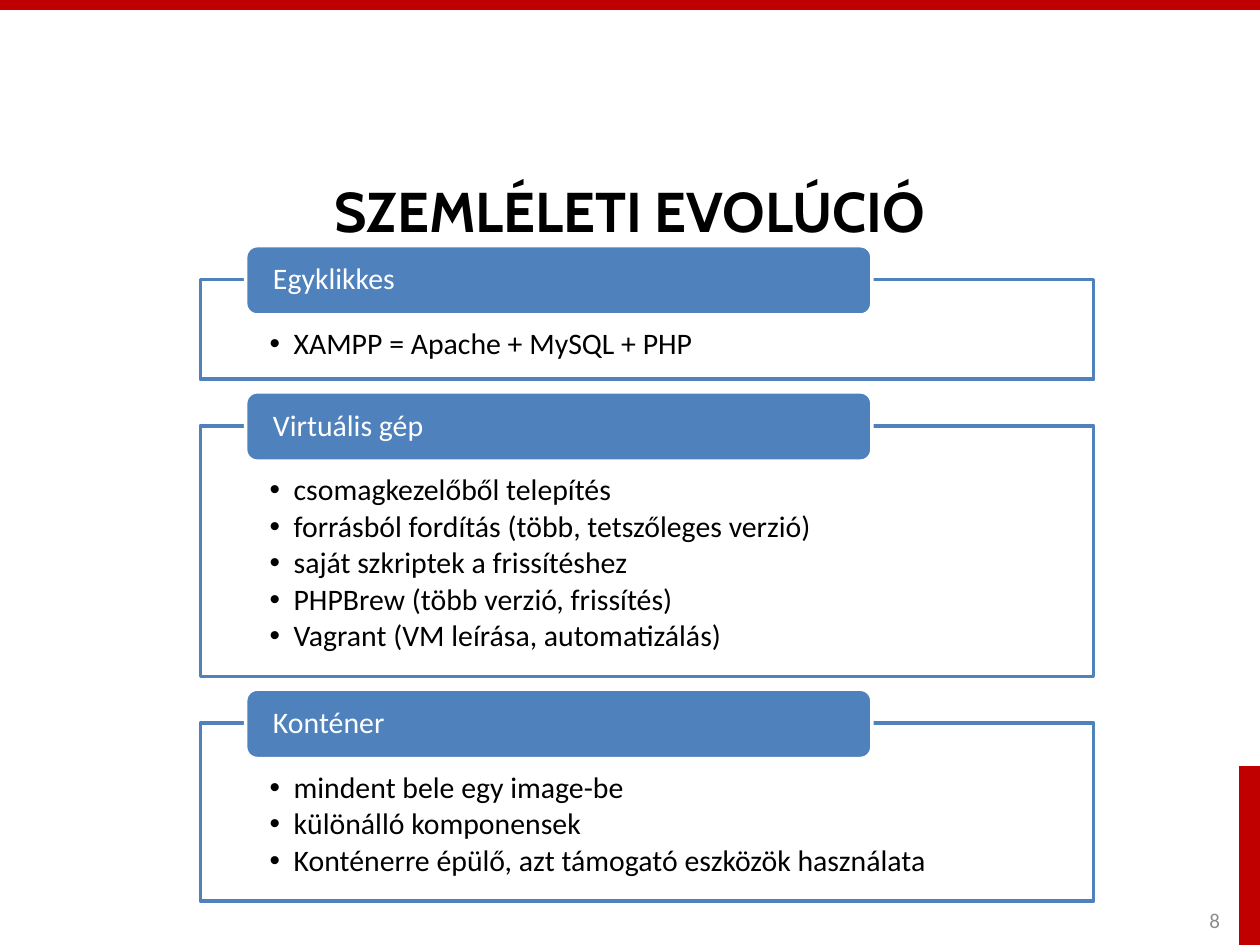
from lxml.etree import SubElement
from pptx import Presentation
from pptx.dml.color import RGBColor
from pptx.enum.shapes import MSO_CONNECTOR, MSO_SHAPE
from pptx.enum.text import MSO_ANCHOR, PP_ALIGN
from pptx.oxml.ns import qn
from pptx.util import Inches, Pt

HUES = {"red": "C00000", "blue": "4F81BD", "white": "FFFFFF", "black": "000000", "gray": "8C8C8C"}


def style(para, size, hue, face="Calibri", bold=False):
    font = para.font
    font.name, font.size, font.bold = face, Pt(size), bold
    font.color.rgb = RGBColor.from_string(HUES[hue])


def add_box(kind, left, top, width, height, fill, line, pads, anchor):
    box = slide.shapes.add_shape(kind, Inches(left), Inches(top), Inches(width), Inches(height))
    box.shadow.inherit = False
    box.fill.solid()
    box.fill.fore_color.rgb = RGBColor.from_string(HUES[fill])
    box.line.color.rgb = RGBColor.from_string(HUES[line])
    box.line.width = Pt(2)
    frame = box.text_frame
    frame.word_wrap = True
    frame.vertical_anchor = anchor
    frame.margin_left = frame.margin_right = Inches(pads[0])
    frame.margin_top, frame.margin_bottom = Inches(pads[1]), Inches(pads[2])
    return frame


deck = Presentation()
deck.slide_width, deck.slide_height = Inches(10), Inches(7.5)
slide = deck.slides.add_slide(deck.slide_layouts[5])

bars = [(0, 0.04, 10, 0.04, 6), (9.92, 6.08, 9.92, 7.5, 12)]
for x1, y1, x2, y2, width in bars:
    bar = slide.shapes.add_connector(
        MSO_CONNECTOR.STRAIGHT, Inches(x1), Inches(y1), Inches(x2), Inches(y2))
    bar.line.color.rgb = RGBColor.from_string(HUES["red"])
    bar.line.width = Pt(width)
    SubElement(bar.element.spPr, qn("a:effectLst"))

title = slide.shapes.title
title.left, title.top = Inches(0.5), Inches(1.04)
title.width, title.height = Inches(9), Inches(1.25)
title.text_frame.text = "SZEMLÉLETI EVOLÚCIÓ"
title.text_frame.vertical_anchor = MSO_ANCHOR.MIDDLE
title.text_frame.paragraphs[0].alignment = PP_ALIGN.CENTER
style(title.text_frame.paragraphs[0], 32, "black", "Cabin", True)

stages = [
    ("Egyklikkes", 0.79, ["XAMPP =\u00a0Apache + MySQL\u00a0+ PHP"]),
    ("Virtuális gép", 1.99, [
        "csomagkezelőből telepítés",
        "forrásból fordítás (több, tetszőleges verzió)",
        "saját szkriptek a frissítéshez",
        "PHPBrew (több verzió, frissítés)",
        "Vagrant (VM leírása, automatizálás)",
    ]),
    ("Konténer", 1.41, [
        "mindent bele egy image-be",
        "különálló komponensek",
        "Konténerre épülő, azt támogató eszközök használata",
    ]),
]
top = 2.22
for name, height, items in stages:
    panel = add_box(MSO_SHAPE.RECTANGLE, 1.59, top, 7.09, height,
                    "white", "blue", (0.55, 0.39, 0.13), MSO_ANCHOR.TOP)
    panel.text = "\n".join(items)
    for para in panel.paragraphs:
        props = para._p.get_or_add_pPr()
        props.set("marL", str(Inches(0.19)))
        props.set("indent", str(Inches(-0.19)))
        SubElement(props, qn("a:buFont")).set("typeface", "Arial")
        SubElement(props, qn("a:buChar")).set("char", "•")
        para.alignment = PP_ALIGN.LEFT
        para.line_spacing = 0.9
        para.space_after = Pt(2.5)
        style(para, 17, "black")

    head = add_box(MSO_SHAPE.ROUNDED_RECTANGLE, 1.95, top - 0.27, 4.97, 0.55,
                   "blue", "white", (0.19, 0, 0), MSO_ANCHOR.MIDDLE)
    head.text = name
    head.paragraphs[0].alignment = PP_ALIGN.LEFT
    head.paragraphs[0].line_spacing = 0.9
    style(head.paragraphs[0], 17, "white")
    top += height + 0.37

page = slide.shapes.add_textbox(Inches(9.37), Inches(7.1), Inches(0.41), Inches(0.4)).text_frame
page.word_wrap = True
page.vertical_anchor = MSO_ANCHOR.MIDDLE
page.text = "8"
page.paragraphs[0].alignment = PP_ALIGN.RIGHT
style(page.paragraphs[0], 12, "gray")

deck.save("out.pptx")
